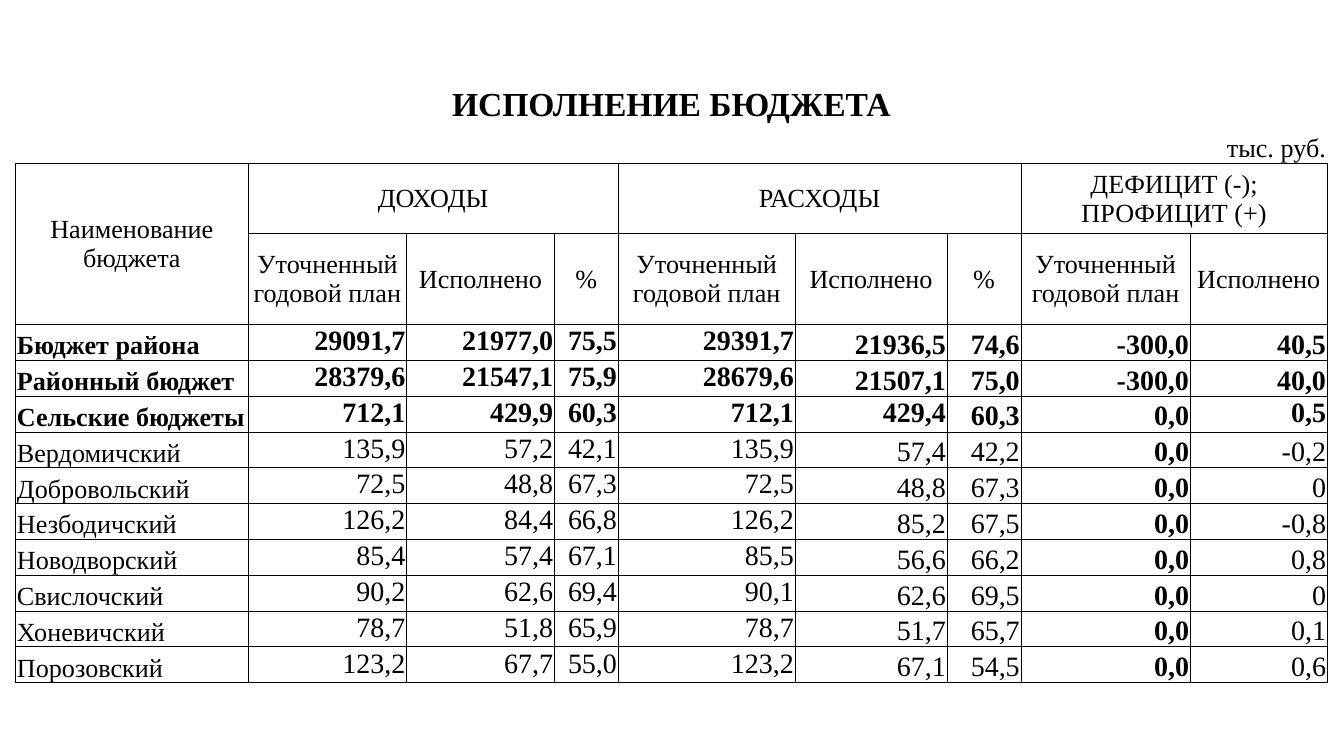
import pptx
import pptx.dml.color
import pptx.enum.text
import pptx.oxml
import pptx.oxml.ns
import pptx.util
from pptx.util import Pt

FONT = "Times New Roman"
BLACK = "000000"
ALIGN = pptx.enum.text.PP_ALIGN
ANCHOR = pptx.enum.text.MSO_ANCHOR

COLUMN_WIDTHS = [124.6, 72.7, 12.2, 52.6, 26.6, 34.2, 94.8,
                 64.8, 16.6, 39.6, 90.7, 8.6, 64.8]
ROW_HEIGHTS = [24.5, 19.2, 37.4, 49] + [19.2] * 10
TITLE_ROW, UNIT_ROW, GROUP_ROW, HEADER_ROW, FIRST_DATA_ROW = range(5)

# Grid columns where the nine visible columns start, and the double ones
STARTS = [0, 1, 3, 5, 6, 7, 9, 10, 11]
DOUBLE = [1, 3, 7, 11]
TOP_ANCHORED = {1, 3, 5, 6}
BALANCE_PLAN = 10

# First column, last column and heading of each group
GROUPS = [
    (1, 5, "ДОХОДЫ"),
    (6, 9, "РАСХОДЫ"),
    (10, 12, "ДЕФИЦИТ (-); ПРОФИЦИТ (+)"),
]
PLAN, DONE = "Уточненный годовой план", "Исполнено"
HEADERS = [PLAN, DONE, "%", PLAN, DONE, "%", PLAN, DONE]

TOTALS = [
    ("Бюджет района", "29091,7 21977,0 75,5 29391,7 21936,5 74,6 -300,0 40,5"),
    ("Районный бюджет", "28379,6 21547,1 75,9 28679,6 21507,1 75,0 -300,0 40,0"),
    ("Сельские бюджеты", "712,1 429,9 60,3 712,1 429,4 60,3 0,0 0,5"),
]
VILLAGES = [
    ("Вердомичский", "135,9 57,2 42,1 135,9 57,4 42,2 0,0 -0,2"),
    ("Добровольский", "72,5 48,8 67,3 72,5 48,8 67,3 0,0 0"),
    ("Незбодичский", "126,2 84,4 66,8 126,2 85,2 67,5 0,0 -0,8"),
    ("Новодворский", "85,4 57,4 67,1 85,5 56,6 66,2 0,0 0,8"),
    ("Свислочский", "90,2 62,6 69,4 90,1 62,6 69,5 0,0 0"),
    ("Хоневичский", "78,7 51,8 65,9 78,7 51,7 65,7 0,0 0,1"),
    ("Порозовский", "123,2 67,7 55,0 123,2 67,1 54,5 0,0 0,6"),
]


def color(hex_value):
    return pptx.dml.color.RGBColor.from_string(hex_value)


def apply_format(target, values):
    for name, value in values.items():
        setattr(target, name, value)


def set_borders(cell, visible_sides):
    """Draw thin lines on the given sides (of L, R, T, B), none elsewhere."""
    properties = cell._tc.get_or_add_tcPr()
    namespace = pptx.oxml.ns.nsdecls("a")
    for position, side in enumerate("LRTB"):
        if side in visible_sides:
            fill = f'<a:solidFill><a:srgbClr val="{BLACK}"/></a:solidFill>'
        else:
            fill = "<a:noFill/>"
        line = f'<a:ln{side} {namespace} w="{Pt(0.5)}">{fill}</a:ln{side}>'
        properties.insert(position, pptx.oxml.parse_xml(line))


def prepare_cell(cell, visible_sides):
    apply_format(cell, {"margin_left": Pt(0.7), "margin_right": Pt(0.7),
                        "margin_top": Pt(0.7), "margin_bottom": Pt(0)})
    cell.fill.background()
    set_borders(cell, visible_sides)
    # Small size for empty cells, so that they do not stretch their row
    end = pptx.oxml.parse_xml(
        f'<a:endParaRPr {pptx.oxml.ns.nsdecls("a")} sz="1000"/>')
    cell.text_frame.paragraphs[0]._p.append(end)


def write_cell(cell, text, size=14, bold=False,
               alignment=ALIGN.CENTER, anchor=ANCHOR.MIDDLE):
    cell.vertical_anchor = anchor
    paragraph = cell.text_frame.paragraphs[0]
    paragraph.alignment = alignment
    run = paragraph.add_run()
    run.text = text
    apply_format(run.font, {"name": FONT, "size": Pt(size), "bold": bold})
    run.font.color.rgb = color(BLACK)


def merge_columns(table, row, first, last):
    table.cell(row, first).merge(table.cell(row, last))


def add_budget_table(slide):
    shape = slide.shapes.add_table(
        len(ROW_HEIGHTS), len(COLUMN_WIDTHS), Pt(8.4), Pt(43.8),
        Pt(sum(COLUMN_WIDTHS)), Pt(sum(ROW_HEIGHTS)))
    table = shape.table
    apply_format(table, {"first_row": False, "horz_banding": False})
    for column, width in zip(table.columns, COLUMN_WIDTHS):
        column.width = Pt(width)
    for index, (row, height) in enumerate(zip(table.rows, ROW_HEIGHTS)):
        row.height = Pt(height)
        sides = {TITLE_ROW: "", UNIT_ROW: "B"}.get(index, "LRTB")
        for cell in row.cells:
            prepare_cell(cell, sides)
    return table


def fill_headings(table):
    last_column = len(COLUMN_WIDTHS) - 1
    # Title and unit
    merge_columns(table, TITLE_ROW, 0, last_column)
    write_cell(table.cell(TITLE_ROW, 0), "ИСПОЛНЕНИЕ БЮДЖЕТА", 18, True)
    for first in (2, 4, 8, 10):
        merge_columns(table, UNIT_ROW, first, first + 1)
    write_cell(table.cell(UNIT_ROW, last_column), "тыс. руб.",
               alignment=ALIGN.RIGHT, anchor=ANCHOR.BOTTOM)
    # Two-level column headings
    table.cell(GROUP_ROW, 0).merge(table.cell(HEADER_ROW, 0))
    write_cell(table.cell(GROUP_ROW, 0), "Наименование бюджета")
    for first, last, heading in GROUPS:
        merge_columns(table, GROUP_ROW, first, last)
        write_cell(table.cell(GROUP_ROW, first), heading)
    for column, heading in zip(STARTS[1:], HEADERS):
        write_cell(table.cell(HEADER_ROW, column), heading)


def fill_data(table):
    for row in range(HEADER_ROW, len(ROW_HEIGHTS)):
        for first in DOUBLE:
            merge_columns(table, row, first, first + 1)
    for row, (name, values) in enumerate(TOTALS + VILLAGES, FIRST_DATA_ROW):
        is_total = row < FIRST_DATA_ROW + len(TOTALS)
        top_columns = set(TOP_ANCHORED)
        if name == "Сельские бюджеты":
            top_columns |= {7, 11}
        write_cell(table.cell(row, 0), name, 14, is_total,
                   ALIGN.LEFT, ANCHOR.BOTTOM)
        for column, value in zip(STARTS[1:], values.split()):
            anchor = ANCHOR.TOP if column in top_columns else ANCHOR.BOTTOM
            write_cell(table.cell(row, column), value, 15,
                       is_total or column == BALANCE_PLAN,
                       ALIGN.RIGHT, anchor)


def main():
    presentation = pptx.Presentation()
    apply_format(presentation,
                 {"slide_width": Pt(720), "slide_height": Pt(405)})
    slide = presentation.slides.add_slide(presentation.slide_layouts[6])
    table = add_budget_table(slide)
    fill_headings(table)
    fill_data(table)
    presentation.save("out.pptx")


if __name__ == "__main__":
    main()
